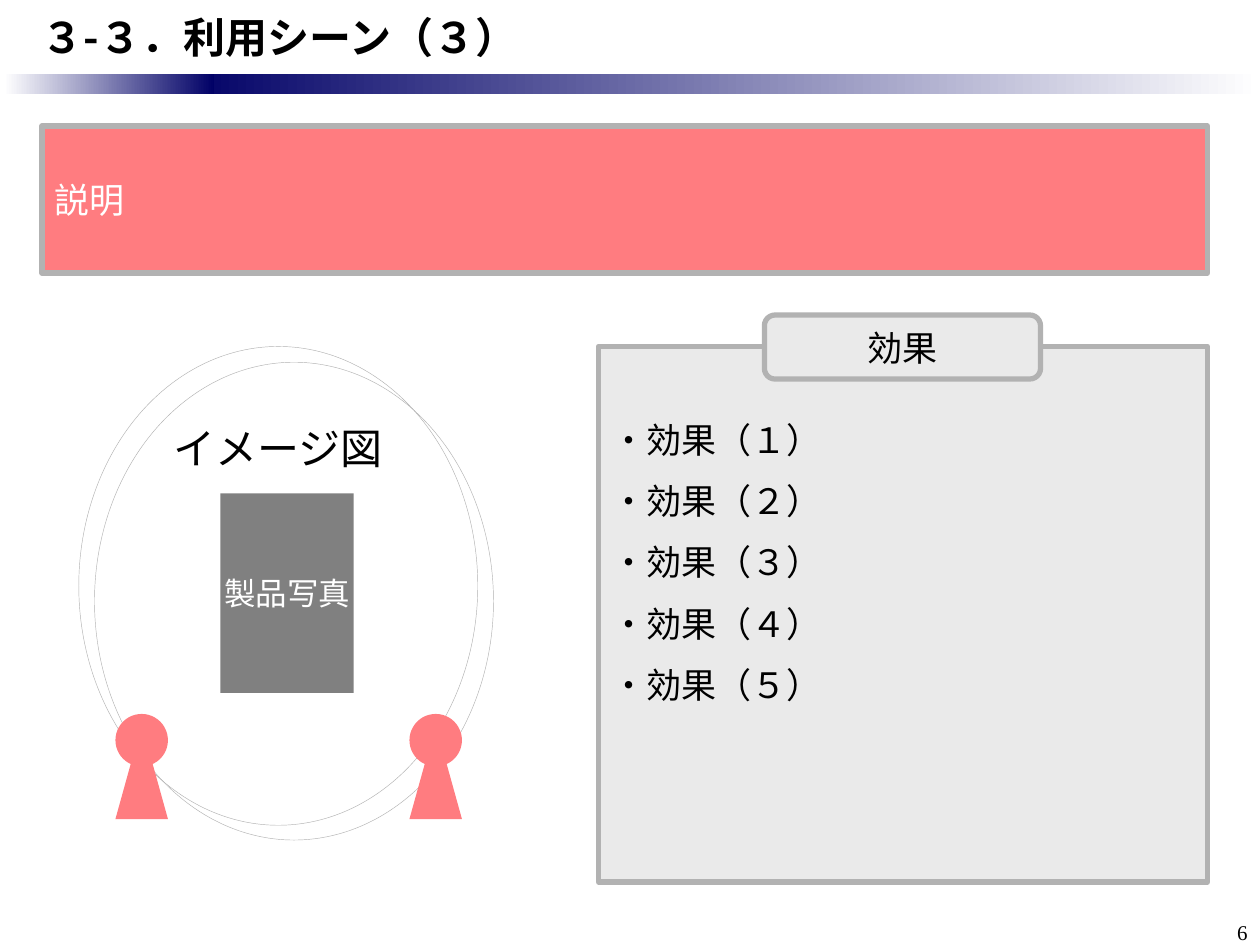
from dataclasses import dataclass

from lxml.etree import SubElement
from pptx import Presentation
from pptx.dml.color import RGBColor
from pptx.enum.shapes import MSO_SHAPE
from pptx.enum.text import MSO_ANCHOR, PP_ALIGN
from pptx.oxml.ns import qn
from pptx.util import Inches, Pt

TITLE = "３-３．利用シーン（３）"
NOTE = "説明"
TAB = "効果"
GAINS = ["・効果（１）", "・効果（２）", "・効果（３）", "・効果（４）", "・効果（５）"]
IMAGE = "イメージ図"
PHOTO = "製品写真"
PAGE = "6"

COLS, ROWS = 120, 90
BARS = [((17, 7, 103, 2), ("navy", "white")), ((0.4, 7, 20, 2), ("white", "navy"))]
RINGS = [((7.5, 33, 38, 45.6), IMAGE), ((9, 34.5, 38, 45.5), "")]
PEOPLE = [11, 39]


@dataclass(frozen=True)
class Theme:
    navy: str = "000066"
    white: str = "FFFFFF"
    black: str = "000000"
    pink: str = "FF7C80"
    pale: str = "EAEAEA"
    edge: str = "B2B2B2"
    gray: str = "808080"
    sans: str = "Noto Sans CJK JP"
    serif: str = "Times New Roman"
    head: int = 24
    body: int = 20
    label: int = 18
    small: int = 12


LOOK = Theme()
deck = Presentation()
deck.slide_width, deck.slide_height = Inches(10), Inches(7.5)
slide = deck.slides.add_slide(deck.slide_layouts[1])


def place(cell):
    x, y, w, h = cell
    dx, dy = deck.slide_width / COLS, deck.slide_height / ROWS
    return [round(v) for v in (x * dx, y * dy, w * dx, h * dy)]


def move(shape, cell):
    shape.left, shape.top, shape.width, shape.height = place(cell)


def paint(shape, fill=None, edge=0):
    if fill:
        shape.fill.solid()
        shape.fill.fore_color.rgb = RGBColor.from_string(fill)
    else:
        shape.fill.background()
    if edge:
        shape.line.color.rgb = RGBColor.from_string(LOOK.edge)
        shape.line.width = Pt(edge)
    else:
        shape.line.fill.background()


def draw(kind, cell, fill=None, edge=0, home=slide):
    shape = home.shapes.add_shape(kind, *place(cell))
    shape.shadow.inherit = False
    paint(shape, fill, edge)
    return shape


def write(shape, *lines, size=LOOK.body, color=LOOK.black, font=LOOK.sans, bold=False,
          align=PP_ALIGN.LEFT, anchor=MSO_ANCHOR.MIDDLE, wrap=True, left=0.1, top=0.05, after=0):
    frame = shape.text_frame
    frame.word_wrap, frame.vertical_anchor = wrap, anchor
    frame.margin_left, frame.margin_top = Inches(left), Inches(top)
    frame.margin_right, frame.margin_bottom = Inches(0.1), Inches(0.05)
    for i, line in enumerate(lines):
        para = frame.add_paragraph() if i else frame.paragraphs[0]
        para.alignment = align
        para.space_before, para.space_after = Pt(0), Pt(after)
        run = para.add_run()
        run.text = line
        run.font.size, run.font.bold, run.font.name = Pt(size), bold, font
        run.font.color.rgb = RGBColor.from_string(color)
        SubElement(run.font._element, qn("a:ea")).set("typeface", LOOK.sans)


for cell, tones in BARS:
    bar = draw(MSO_SHAPE.RECTANGLE, cell)
    bar.fill.gradient()
    bar.fill.gradient_angle = 0
    for stop, tone in zip(bar.fill.gradient_stops, tones):
        stop.color.rgb = RGBColor.from_string(getattr(LOOK, tone))

page = slide.shapes.add_textbox(*place((113, 87, 7, 3)))
write(page, PAGE, size=LOOK.small, font=LOOK.serif, align=PP_ALIGN.RIGHT, anchor=MSO_ANCHOR.TOP)

title, gains = slide.placeholders
move(title, (0, 0, 120, 7))
write(title, TITLE, size=LOOK.head, bold=True, left=0.33)

note = draw(MSO_SHAPE.RECTANGLE, (4, 12, 111, 14), LOOK.pink, 3)
write(note, NOTE, color=LOOK.white)

move(gains, (57, 33, 58, 51))
paint(gains, LOOK.pale, 3)
write(gains, *GAINS, anchor=MSO_ANCHOR.TOP, top=0.57, after=11)
for para in gains.text_frame.paragraphs:
    props = para._p.get_or_add_pPr()
    props.set("marL", "0")
    props.set("indent", "0")
    SubElement(props, qn("a:buNone"))

tab = draw(MSO_SHAPE.ROUNDED_RECTANGLE, (72.8, 30, 26.3, 6.1), LOOK.pale, 3)
write(tab, TAB, font=LOOK.serif, align=PP_ALIGN.CENTER)

for cell, text in RINGS:
    ring = draw(MSO_SHAPE.OVAL, cell, edge=0.25)
    if text:
        write(ring, text, size=LOOK.head, font=LOOK.serif, align=PP_ALIGN.CENTER,
              anchor=MSO_ANCHOR.TOP, wrap=False)

for x in PEOPLE:
    group = slide.shapes.add_group_shape()
    draw(MSO_SHAPE.ISOSCELES_TRIANGLE, (x, 69, 5, 9), LOOK.pink, home=group)
    draw(MSO_SHAPE.OVAL, (x, 68, 5, 5), LOOK.pink, home=group)

photo = draw(MSO_SHAPE.RECTANGLE, (21, 47, 12.7, 19), LOOK.gray)
write(photo, PHOTO, size=LOOK.label, color=LOOK.white, font=LOOK.serif,
      align=PP_ALIGN.CENTER, wrap=False)

deck.save("out.pptx")
